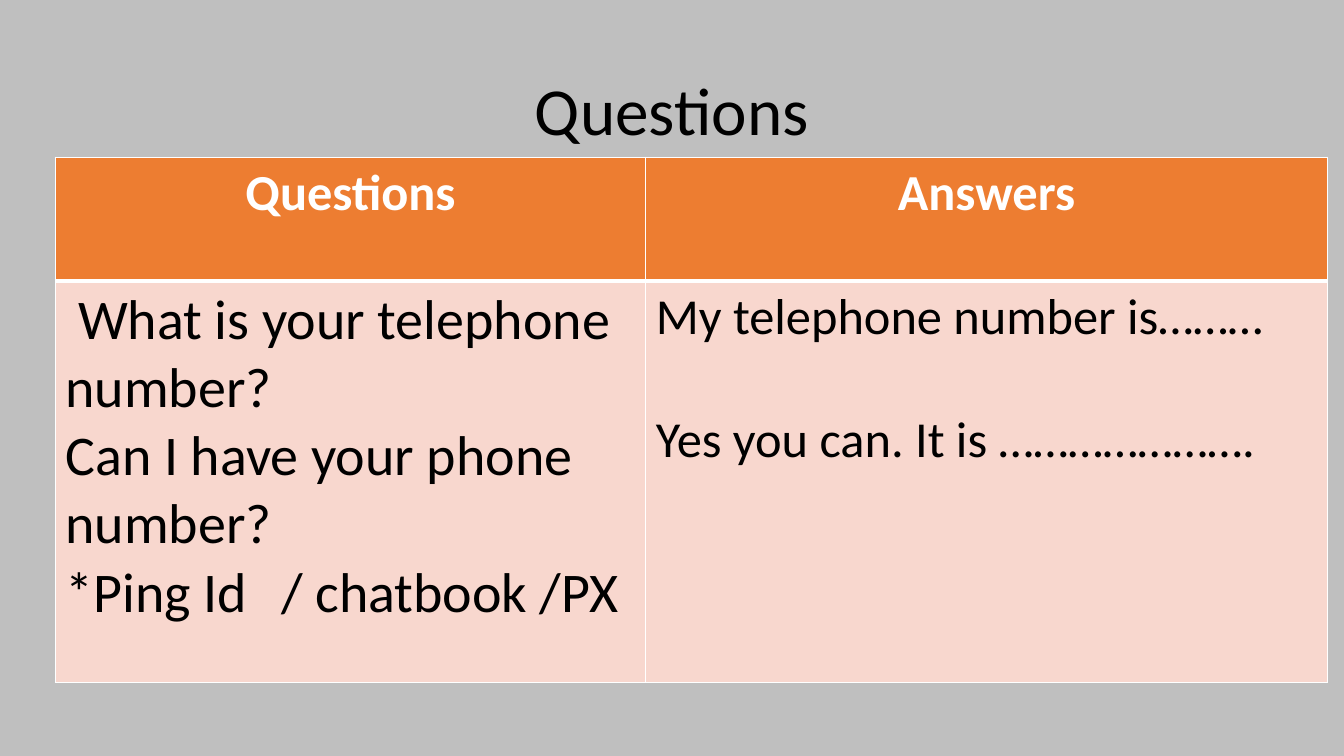
from lxml.etree import SubElement
from pptx import Presentation
from pptx.dml.color import RGBColor
from pptx.enum.text import MSO_ANCHOR, PP_ALIGN
from pptx.oxml.ns import qn
from pptx.util import Pt

COLORS = {
    "background": "BFBFBF",
    "header": "ED7D31",
    "body": "F8D7CE",
    "white": "FFFFFF",
    "black": "000000",
}
HEADINGS = ["Questions", "Answers"]
QUESTIONS = [
    " What is your telephone number?",
    "Can I have your phone number?",
    "*Ping Id\t/ chatbook /PX",
]
ANSWERS = ["My telephone number is………", "Yes you can. It is …………………."]
COLUMN_WIDTHS = [421.7, 486.9]
ROW_HEIGHTS = [88.4, 286.9]


def rgb(name):
    return RGBColor.from_string(COLORS[name])


def write_text(frame, lines, size, color="black", bold=False,
               align=PP_ALIGN.LEFT, line_spacing=1.0, gap=0, tab=None):
    """Fill the frame with one paragraph per line; gap separates paragraphs."""
    frame.word_wrap = True
    for index, line in enumerate(lines):
        paragraph = frame.paragraphs[0] if index == 0 else frame.add_paragraph()
        paragraph.alignment = align
        paragraph.line_spacing = line_spacing
        paragraph.space_before = Pt(gap if index else 0)
        if tab and "\t" in line:
            stops = SubElement(paragraph._p.get_or_add_pPr(), qn("a:tabLst"))
            SubElement(stops, qn("a:tab"), pos=str(Pt(tab)), algn="l")
        run = paragraph.add_run()
        run.text = line
        run.font.name = "Calibri"
        run.font.size = Pt(size)
        run.font.bold = bold
        run.font.color.rgb = rgb(color)


def style_cell(cell, fill, top=1, bottom=1):
    """Draw white borders of the given widths, then fill the cell."""
    properties = cell._tc.get_or_add_tcPr()
    for side, width in (("L", 1), ("R", 1), ("T", top), ("B", bottom)):
        border = SubElement(properties, qn(f"a:ln{side}"), w=str(Pt(width)))
        solid = SubElement(border, qn("a:solidFill"))
        SubElement(solid, qn("a:srgbClr"), val=COLORS["white"])
    cell.fill.solid()
    cell.fill.fore_color.rgb = rgb(fill)


def place_title(slide, left, top, width, height):
    title = slide.shapes.title
    title.left, title.top = Pt(left), Pt(top)
    title.width, title.height = Pt(width), Pt(height)
    title.text_frame.vertical_anchor = MSO_ANCHOR.MIDDLE
    write_text(title.text_frame, ["Questions"], 48,
               align=PP_ALIGN.CENTER, line_spacing=0.9)


def add_dialogue_table(slide, left, top):
    table = slide.shapes.add_table(
        2, 2, Pt(left), Pt(top),
        Pt(sum(COLUMN_WIDTHS)), Pt(sum(ROW_HEIGHTS))).table
    for column, width in zip(table.columns, COLUMN_WIDTHS):
        column.width = Pt(width)
    for row, height in zip(table.rows, ROW_HEIGHTS):
        row.height = Pt(height)
    for column, heading in enumerate(HEADINGS):
        header, body = table.cell(0, column), table.cell(1, column)
        style_cell(header, "header", bottom=3)
        style_cell(body, "body", top=3)
        write_text(header.text_frame, [heading], 36, color="white",
                   bold=True, align=PP_ALIGN.CENTER)
    write_text(table.cell(1, 0).text_frame, QUESTIONS, 40, tab=154)
    write_text(table.cell(1, 1).text_frame, ANSWERS, 36, gap=44)


def build_questions_slide(deck):
    slide = deck.slides.add_slide(deck.slide_layouts[5])
    slide.background.fill.solid()
    slide.background.fill.fore_color.rgb = rgb("background")
    place_title(slide, 66, 28.8, 828, 104.4)
    add_dialogue_table(slide, 39.6, 112.3)


def main():
    deck = Presentation()
    deck.slide_width, deck.slide_height = Pt(960), Pt(540)
    build_questions_slide(deck)
    deck.save("out.pptx")


if __name__ == "__main__":
    main()
